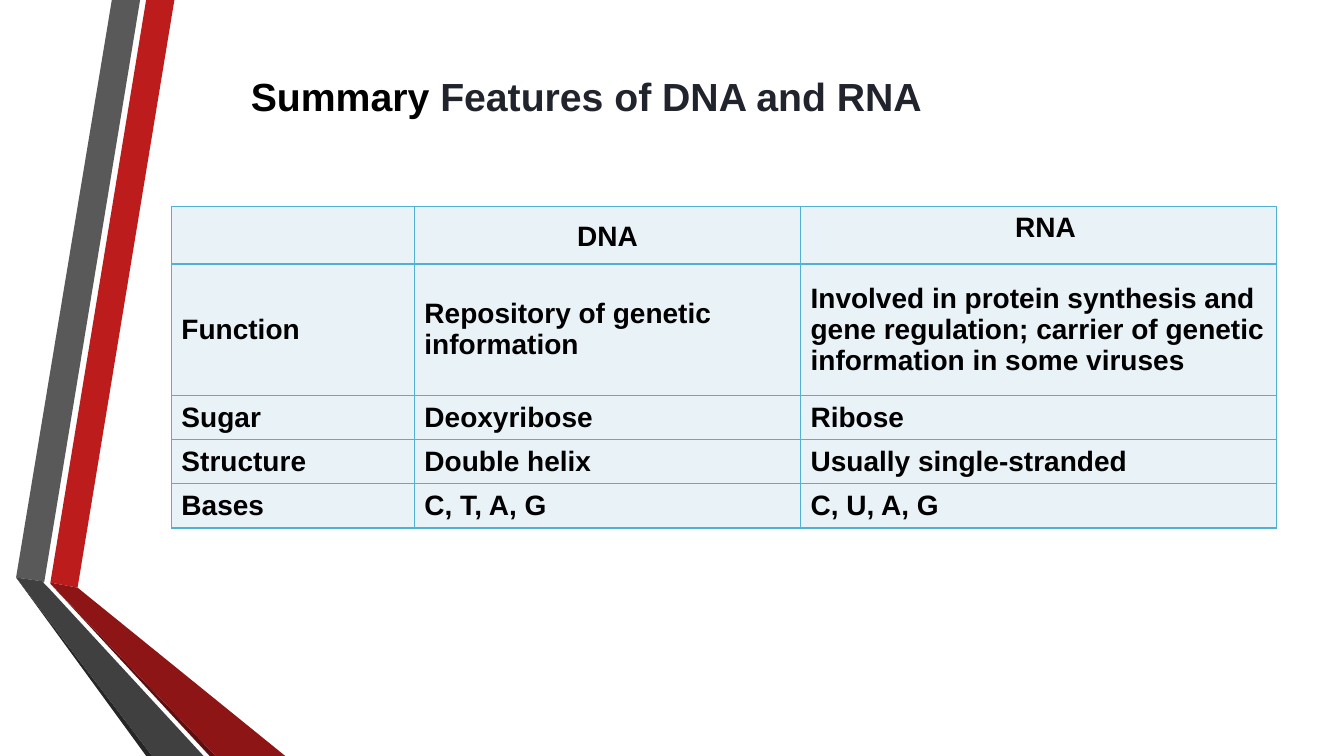
"""Build a slide that compares the features of DNA and RNA in a table."""
import pptx
import pptx.dml.color
import pptx.enum.text
import pptx.oxml
import pptx.oxml.ns
import pptx.util

UNIT = 9144
ALIGN = pptx.enum.text.PP_ALIGN
ANCHOR = pptx.enum.text.MSO_ANCHOR


def rgb(code):
    return pptx.dml.color.RGBColor.from_string(code)


def add_words(paragraph, words, size, color):
    run = paragraph.add_run()
    run.text = words
    style = {"name": "Arial", "size": pptx.util.Pt(size), "bold": True}
    for key, value in style.items():
        setattr(run.font, key, value)
    run.font.color.rgb = rgb(color)


deck = pptx.Presentation()
deck.slide_width = 1333 * UNIT
deck.slide_height = 750 * UNIT
slide = deck.slides.add_slide(deck.slide_layouts[6])

ribbons = [
    ("BC1C1C", [(50, 578), (77, 583), (173, 0), (145, 0)]),
    ("595959", [(139, 0), (111, 0), (16, 573), (44, 577)]),
    ("262626", [(16, 573), (145, 750), (151, 750)]),
    ("5E0E0E", [(50, 579), (208, 750), (214, 750)]),
    ("8D1515", [(50, 579), (214, 750), (283, 750), (77, 583), (50, 578)]),
    ("404040", [(202, 750), (48, 583), (43, 578), (44, 577), (16, 573), (151, 750)]),
]
for color, corners in ribbons:
    outline = slide.shapes.build_freeform(*corners[0], scale=UNIT)
    outline.add_line_segments(corners[1:], close=True)
    ribbon = outline.convert_to_shape()
    ribbon.shadow.inherit = False
    ribbon.fill.solid()
    ribbon.fill.fore_color.rgb = rgb(color)
    ribbon.line.fill.background()

title = slide.shapes.add_textbox(239 * UNIT, 67 * UNIT, 755 * UNIT, 57 * UNIT).text_frame
title.word_wrap = True
add_words(title.paragraphs[0], "Summary ", 28, "000000")
add_words(title.paragraphs[0], "Features of DNA and RNA", 28, "21242C")

features = [
    ("", "DNA", "RNA"),
    ("Function", "Repository of genetic information",
     "Involved in protein synthesis and gene regulation; "
     "carrier of genetic information in some viruses"),
    ("Sugar", "Deoxyribose", "Ribose"),
    ("Structure", "Double helix", "Usually single-stranded"),
    ("Bases", "C, T, A, G", "C, U, A, G"),
]
widths = [241, 383, 472]
heights = [57, 130, 44, 44, 44]
summary = slide.shapes.add_table(
    len(heights), len(widths), 170 * UNIT, 205 * UNIT,
    sum(widths) * UNIT, sum(heights) * UNIT).table
summary.first_row = False
summary.horz_banding = False
for column, width in zip(summary.columns, widths):
    column.width = width * UNIT
for row, height in zip(summary.rows, heights):
    row.height = height * UNIT

for r, feature in enumerate(features):
    for c, words in enumerate(feature):
        cell = summary.cell(r, c)
        cell.vertical_anchor = ANCHOR.MIDDLE
        cell.fill.solid()
        cell.fill.fore_color.rgb = rgb("E9F2F7")
        paragraph = cell.text_frame.paragraphs[0]
        paragraph.alignment = ALIGN.LEFT if r else ALIGN.CENTER
        if words:
            add_words(paragraph, words, 20, "000000")
        properties = cell._tc.get_or_add_tcPr()
        for position, side in enumerate("LRTB"):
            border = pptx.oxml.parse_xml(
                f'<a:ln{side} {pptx.oxml.ns.nsdecls("a")} w="12700"><a:solidFill>'
                f'<a:srgbClr val="50B1D4"/></a:solidFill></a:ln{side}>')
            properties.insert(position, border)

summary.cell(0, 1).margin_bottom = 2 * UNIT
rna_heading = summary.cell(0, 2)
rna_heading.vertical_anchor = ANCHOR.TOP
rna_heading.margin_left = 24 * UNIT

deck.save("out.pptx")
